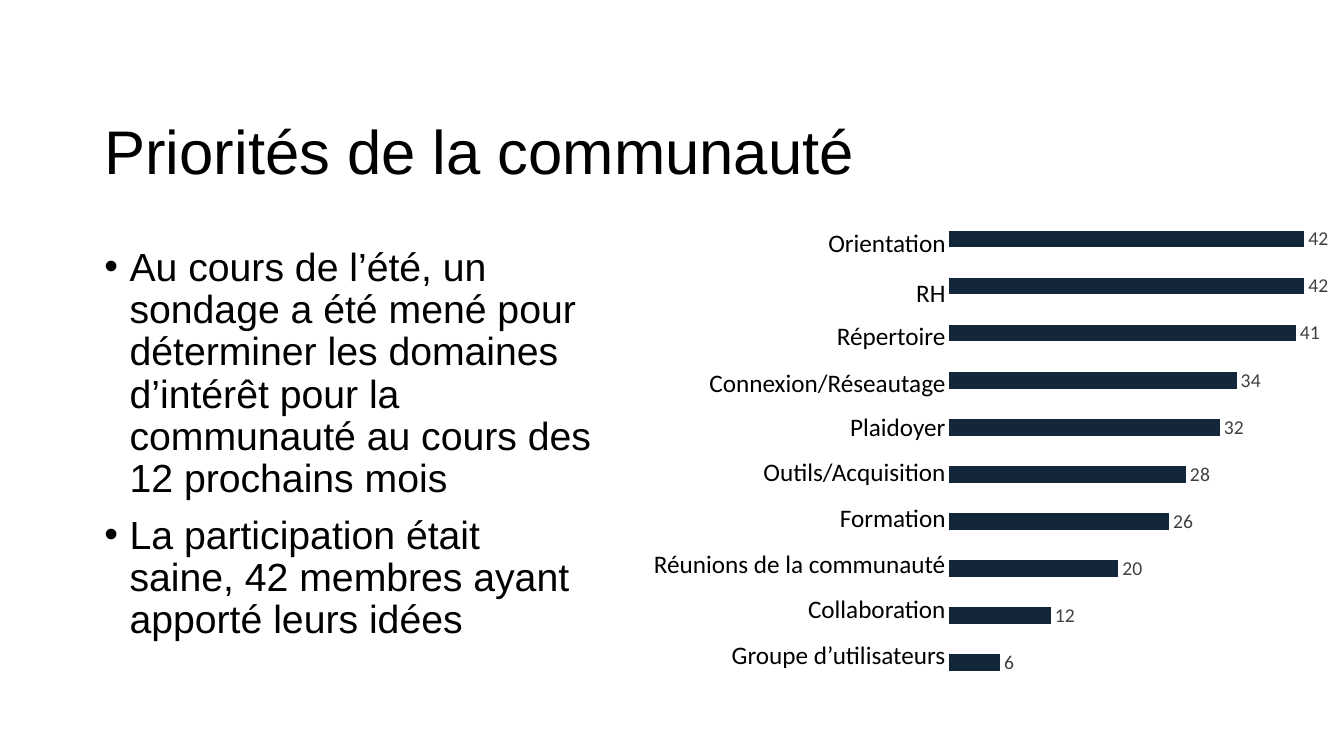
from lxml.etree import SubElement as Sub
from pptx import Presentation
from pptx.chart.data import CategoryChartData as Data
from pptx.dml.color import RGBColor
from pptx.enum.chart import XL_CHART_TYPE as Kind, XL_LABEL_POSITION as Spot
from pptx.enum.text import MSO_ANCHOR as Anchor, MSO_AUTO_SIZE as Fit, PP_ALIGN as Align
from pptx.oxml.ns import qn
from pptx.util import Pt

BLACK = RGBColor(0x00, 0x00, 0x00)
GREY = RGBColor(0x40, 0x40, 0x40)
NAVY = RGBColor(0x14, 0x27, 0x3A)

POINTS = [
    "Au cours de l’été, un sondage a été mené pour déterminer les domaines "
    "d’intérêt pour la communauté au cours des 12 prochains mois",
    "La participation était saine, 42 membres ayant apporté leurs idées",
]
TOPICS = [
    ("Orientation", 343.5, 158.5, 42),
    ("RH", 306, 194.5, 42),
    ("Répertoire", 291.5, 225.5, 41),
    ("Connexion/Réseautage", 285, 258.5, 34),
    ("Plaidoyer", 281, 290, 32),
    ("Outils/Acquisition", 279.5, 322.5, 28),
    ("Formation", 279.5, 355, 26),
    ("Réunions de la communauté", 280, 388, 20),
    ("Collaboration", 278.5, 420, 12),
    ("Groupe d’utilisateurs", 278, 453, 6),
]
EDGE = 682.5


class Deck:
    head = "Arial"
    note = "Calibri"

    def __init__(self):
        self.show = Presentation()
        self.show.slide_width, self.show.slide_height = Pt(960), Pt(540)
        self.slide = self.show.slides.add_slide(self.show.slide_layouts[6])

    def style(self, font, name, size, color=BLACK):
        font.name, font.size = name, Pt(size)
        font.color.rgb = color

    def frame(self, x, y, w, h):
        box = self.slide.shapes.add_textbox(Pt(x), Pt(y), Pt(w), Pt(h))
        box.text_frame.word_wrap = True
        return box.text_frame

    def title(self, text, *area):
        frame = self.frame(*area)
        frame.vertical_anchor = Anchor.MIDDLE
        frame.text = text
        para = frame.paragraphs[0]
        para.line_spacing = 0.9
        self.style(para.runs[0].font, self.head, 44)

    def bullets(self, lines, *area):
        frame = self.frame(*area)
        frame.text = "\n".join(lines)
        for i, para in enumerate(frame.paragraphs):
            para.line_spacing = 0.9
            para.space_before = Pt(10 if i else 0)
            props = para._p.get_or_add_pPr()
            props.set("marL", str(Pt(18)))
            props.set("indent", str(Pt(-18)))
            Sub(props, qn("a:buFont"), typeface=self.head)
            Sub(props, qn("a:buChar"), char="•")
            self.style(para.runs[0].font, self.head, 28)

    def label(self, text, x, y):
        frame = self.frame(x, y, EDGE - x, 29)
        frame.auto_size = Fit.SHAPE_TO_FIT_TEXT
        frame.text = text
        para = frame.paragraphs[0]
        para.alignment = Align.RIGHT
        self.style(para.runs[0].font, self.note, 18)

    def bars(self, vals, x, y, w, h):
        data = Data()
        data.categories = [str(i + 1) for i in range(len(vals))]
        data.add_series("Series 1", vals)
        chart = self.slide.shapes.add_chart(
            Kind.BAR_CLUSTERED, Pt(x), Pt(y), Pt(w), Pt(h), data).chart
        chart.has_legend = chart.has_title = False
        self.style(chart.font, self.note, 10)
        for axis in (chart.category_axis, chart.value_axis):
            axis.has_major_gridlines = False
            axis.visible = False
        chart.value_axis.minimum_scale = 0
        chart.value_axis.maximum_scale = 45
        plot = chart.plots[0]
        plot.gap_width = 182
        plot.vary_by_categories = False
        fill = plot.series[0].format.fill
        fill.solid()
        fill.fore_color.rgb = NAVY
        plot.has_data_labels = True
        tags = plot.data_labels
        tags.show_value = True
        tags.position = Spot.OUTSIDE_END
        self.style(tags.font, self.note, 14, GREY)
        self.place(chart)

    def place(self, chart):
        area = chart._chartSpace.chart.plotArea
        for old in area.findall(qn("c:layout")):
            area.remove(old)
        layout = Sub(area, qn("c:layout"))
        area.insert(0, layout)
        manual = Sub(layout, qn("c:manualLayout"))
        rules = [("layoutTarget", "inner"), ("xMode", "edge"), ("yMode", "edge"),
                 ("x", "0.02"), ("y", "0.02"), ("w", "0.96"), ("h", "0.96")]
        for tag, val in rules:
            Sub(manual, qn("c:" + tag), val=val)


def main():
    deck = Deck()
    deck.title("Priorités de la communauté", 67.5, 74, 856, 73)
    deck.bullets(POINTS, 67.5, 173, 364.5, 296)
    deck.bars([row[3] for row in reversed(TOPICS)], 672.5, 147, 283, 350)
    for text, x, y, _ in TOPICS:
        deck.label(text, x, y)
    deck.show.save("out.pptx")


if __name__ == "__main__":
    main()
